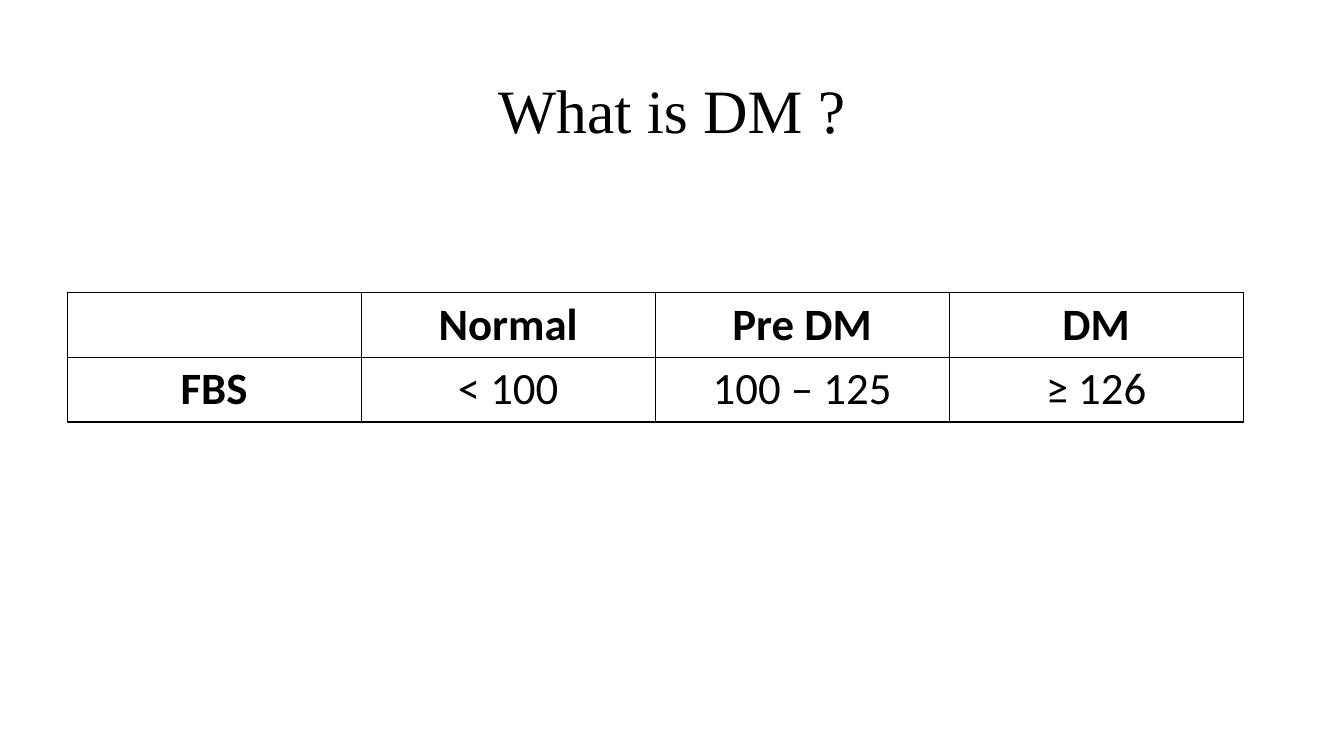
from lxml.etree import SubElement
from pptx import Presentation
from pptx.dml.color import RGBColor
from pptx.enum.text import MSO_ANCHOR, PP_ALIGN
from pptx.oxml.ns import qn
from pptx.util import Pt

BLACK = RGBColor(0x00, 0x00, 0x00)
GLUCOSE_RANGES = [
    ["", "Normal", "Pre DM", "DM"],
    ["FBS", "< 100", "100 – 125", "≥ 126"],
]


def style_font(font, name, size, bold=False):
    font.name = name
    font.size = Pt(size)
    font.bold = bold
    font.color.rgb = BLACK


def add_title(page, left, top, width, height):
    box = page.shapes.title
    box.left, box.top, box.width, box.height = Pt(left), Pt(top), Pt(width), Pt(height)
    frame = box.text_frame
    frame.text = "What is DM ?"
    frame.vertical_anchor = MSO_ANCHOR.MIDDLE
    para = frame.paragraphs[0]
    para.alignment = PP_ALIGN.CENTER
    para.line_spacing = 0.9
    style_font(para.runs[0].font, "Times New Roman", 44)


def add_borders(cell):
    properties = cell._tc.get_or_add_tcPr()
    for side in ("a:lnL", "a:lnR", "a:lnT", "a:lnB"):
        line = SubElement(properties, qn(side), w=str(Pt(1)))
        fill = SubElement(line, qn("a:solidFill"))
        SubElement(fill, qn("a:srgbClr"), val=str(BLACK))


def fill_cell(cell, text, bold):
    cell.margin_left = cell.margin_right = Pt(9.6)
    cell.margin_top = cell.margin_bottom = Pt(3.6)
    add_borders(cell)
    cell.fill.background()
    para = cell.text_frame.paragraphs[0]
    para.text = text
    para.alignment = PP_ALIGN.CENTER
    style_font(para.font, "Calibri", 32, bold)
    for span in para.runs:
        style_font(span.font, "Calibri", 32, bold)


def add_glucose_table(page, left, top, width, height):
    row_count, column_count = len(GLUCOSE_RANGES), len(GLUCOSE_RANGES[0])
    table = page.shapes.add_table(
        row_count, column_count, Pt(left), Pt(top), Pt(width), Pt(height)
    ).table
    table.first_row = table.horz_banding = False
    for column in table.columns:
        column.width = Pt(width / column_count)
    for row in table.rows:
        row.height = Pt(height / row_count)
    # The header row and the header column are bold
    for r, values in enumerate(GLUCOSE_RANGES):
        for c, text in enumerate(values):
            fill_cell(table.cell(r, c), text, bold=r == 0 or c == 0)


def main():
    deck = Presentation()
    deck.slide_width, deck.slide_height = Pt(960), Pt(540)
    page = deck.slides.add_slide(deck.slide_layouts[5])
    # Title
    add_title(page, 66, 28.8, 828, 104.4)
    # Fasting glucose ranges
    add_glucose_table(page, 48, 208.8, 840, 92.6)
    deck.save("out.pptx")


if __name__ == "__main__":
    main()
